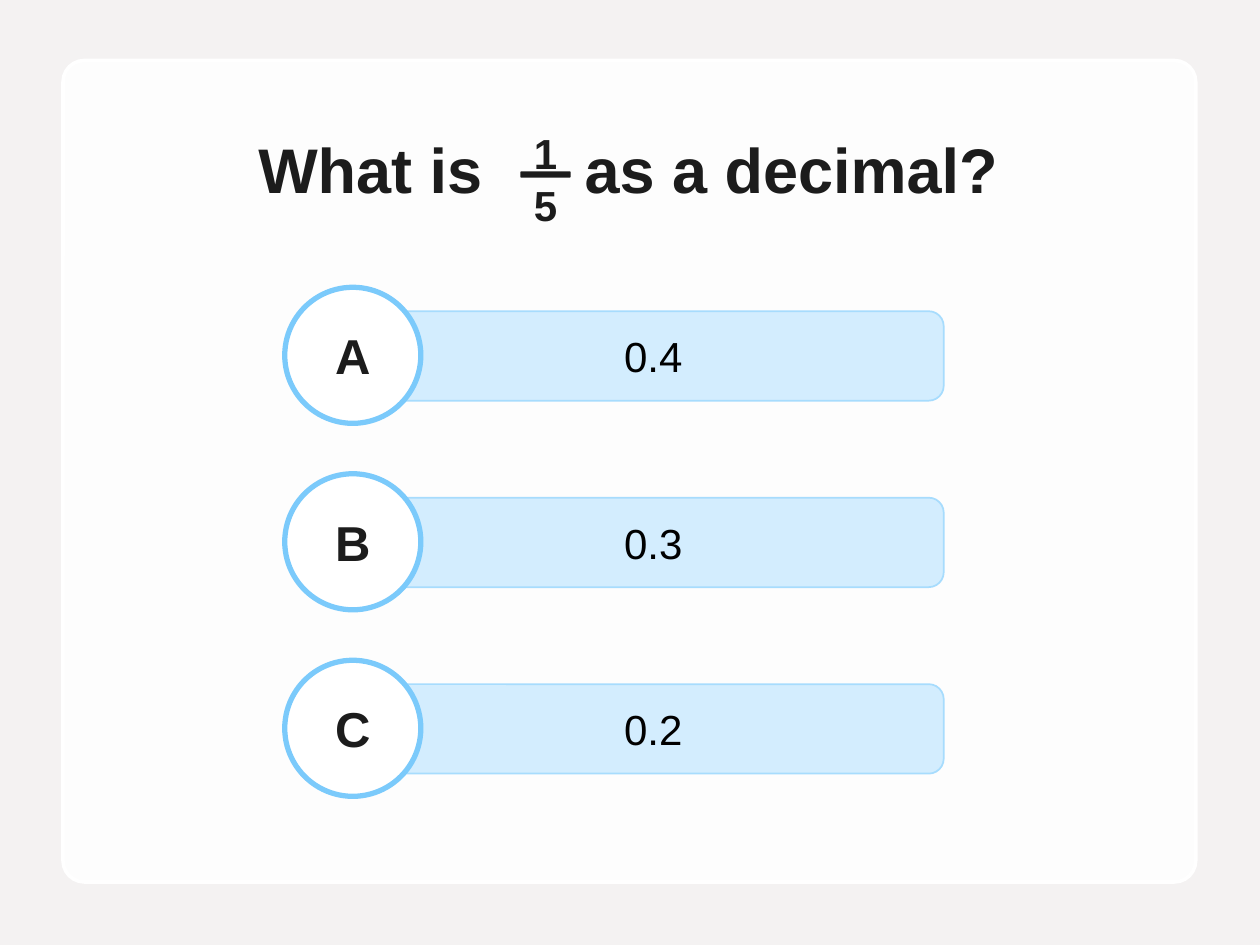
from lxml import etree
from pptx import Presentation
from pptx.dml.color import RGBColor
from pptx.enum.shapes import MSO_SHAPE
from pptx.enum.text import MSO_ANCHOR, PP_ALIGN
from pptx.oxml.ns import qn
from pptx.util import Inches, Pt

BACKGROUND = RGBColor(0xF4, 0xF2, 0xF2)
WHITE = RGBColor(0xFF, 0xFF, 0xFF)
BLACK = RGBColor(0x00, 0x00, 0x00)
INK = RGBColor(0x1C, 0x1C, 0x1C)
PALE_BLUE = RGBColor(0xD3, 0xED, 0xFE)
BAR_EDGE = RGBColor(0xA7, 0xDC, 0xFD)
RING_BLUE = RGBColor(0x7B, 0xCA, 0xFB)

ANSWERS = [("A", "0.4"), ("B", "0.3"), ("C", "0.2")]
ROW_PITCH = 1.48
BAR_TOP, CIRCLE_TOP = 2.47, 2.28

QUESTION_FONT = {"name": "Arial", "size": Pt(36), "bold": True}
FRACTION_FONT = {"name": "Arial", "size": Pt(24), "bold": True}
LETTER_FONT = {"name": "Arial", "size": Pt(28), "bold": True}
ANSWER_FONT = {"name": "Arial", "size": Pt(24), "bold": False}


def set_values(target, values):
    for name, value in values.items():
        setattr(target, name, value)


def write(para, text, font, color, align=PP_ALIGN.CENTER):
    para.alignment = align
    span = para.add_run()
    span.text = text
    set_values(span.font, font)
    span.font.color.rgb = color


def add_shape(page, kind, place, fill, line=None, width=0):
    shape = page.shapes.add_shape(kind, *map(Inches, place))
    shape.shadow.inherit = False
    shape.fill.solid()
    shape.fill.fore_color.rgb = fill
    if line is None:
        shape.line.fill.background()
    else:
        shape.line.color.rgb = line
        shape.line.width = Pt(width)
    return shape


def add_label(shape, text, font, color):
    shape.text_frame.vertical_anchor = MSO_ANCHOR.MIDDLE
    write(shape.text_frame.paragraphs[0], text, font, color)


def add_text_box(page, place, frame_values):
    box = page.shapes.add_textbox(*map(Inches, place))
    set_values(box.text_frame, {"word_wrap": True, **frame_values})
    return box.text_frame


def add_card(page):
    card = add_shape(page, MSO_SHAPE.ROUNDED_RECTANGLE,
                     (0.5, 0.48, 8.99, 6.52), WHITE, WHITE, 2)
    card.adjustments[0] = 0.026
    color = card.fill._xPr.find(qn("a:solidFill"))[0]
    etree.SubElement(color, qn("a:alpha"), val="90000")


def add_question(page):
    """Write the question with a tab stop that leaves room for the fraction."""
    frame = add_text_box(page, (0.5, 0.83, 8.99, 1.09), {
        "margin_left": Inches(1.55), "margin_right": Inches(0.28),
        "margin_top": Inches(0.28), "margin_bottom": Inches(0.28),
        "vertical_anchor": MSO_ANCHOR.MIDDLE})
    para = frame.paragraphs[0]
    para.line_spacing = 0.9
    write(para, "What is\tas a decimal?", QUESTION_FONT, INK, PP_ALIGN.LEFT)
    tabs = etree.SubElement(para._p.get_or_add_pPr(), qn("a:tabLst"))
    etree.SubElement(tabs, qn("a:tab"), pos=str(Inches(2.59)), algn="l")


def add_fraction(page, numerator, denominator):
    frame = add_text_box(page, (4.13, 0.91, 0.4, 0.97), {
        "margin_left": 0, "margin_right": 0,
        "margin_top": Inches(0.1), "margin_bottom": Inches(0.08)})
    write(frame.paragraphs[0], numerator, FRACTION_FONT, INK)
    lower = frame.add_paragraph()
    lower.space_before = Pt(1)
    write(lower, denominator, FRACTION_FONT, INK)
    add_shape(page, MSO_SHAPE.ROUNDED_RECTANGLE, (4.13, 1.36, 0.4, 0.05), INK)


def add_answer(page, row, letter, answer):
    offset = row * ROW_PITCH
    bar = add_shape(page, MSO_SHAPE.ROUNDED_RECTANGLE,
                    (2.88, BAR_TOP + offset, 4.61, 0.71), PALE_BLUE, BAR_EDGE, 1)
    add_label(bar, answer, ANSWER_FONT, BLACK)
    circle = add_shape(page, MSO_SHAPE.OVAL,
                       (2.26, CIRCLE_TOP + offset, 1.08, 1.08), WHITE, RING_BLUE, 3)
    add_label(circle, letter, LETTER_FONT, INK)


def main():
    deck = Presentation()
    deck.slide_width, deck.slide_height = Inches(10), Inches(7.5)
    page = deck.slides.add_slide(deck.slide_layouts[6])
    page.background.fill.solid()
    page.background.fill.fore_color.rgb = BACKGROUND
    add_card(page)
    add_question(page)
    add_fraction(page, "1", "5")
    for row, (letter, answer) in enumerate(ANSWERS):
        add_answer(page, row, letter, answer)
    deck.save("out.pptx")


if __name__ == "__main__":
    main()
